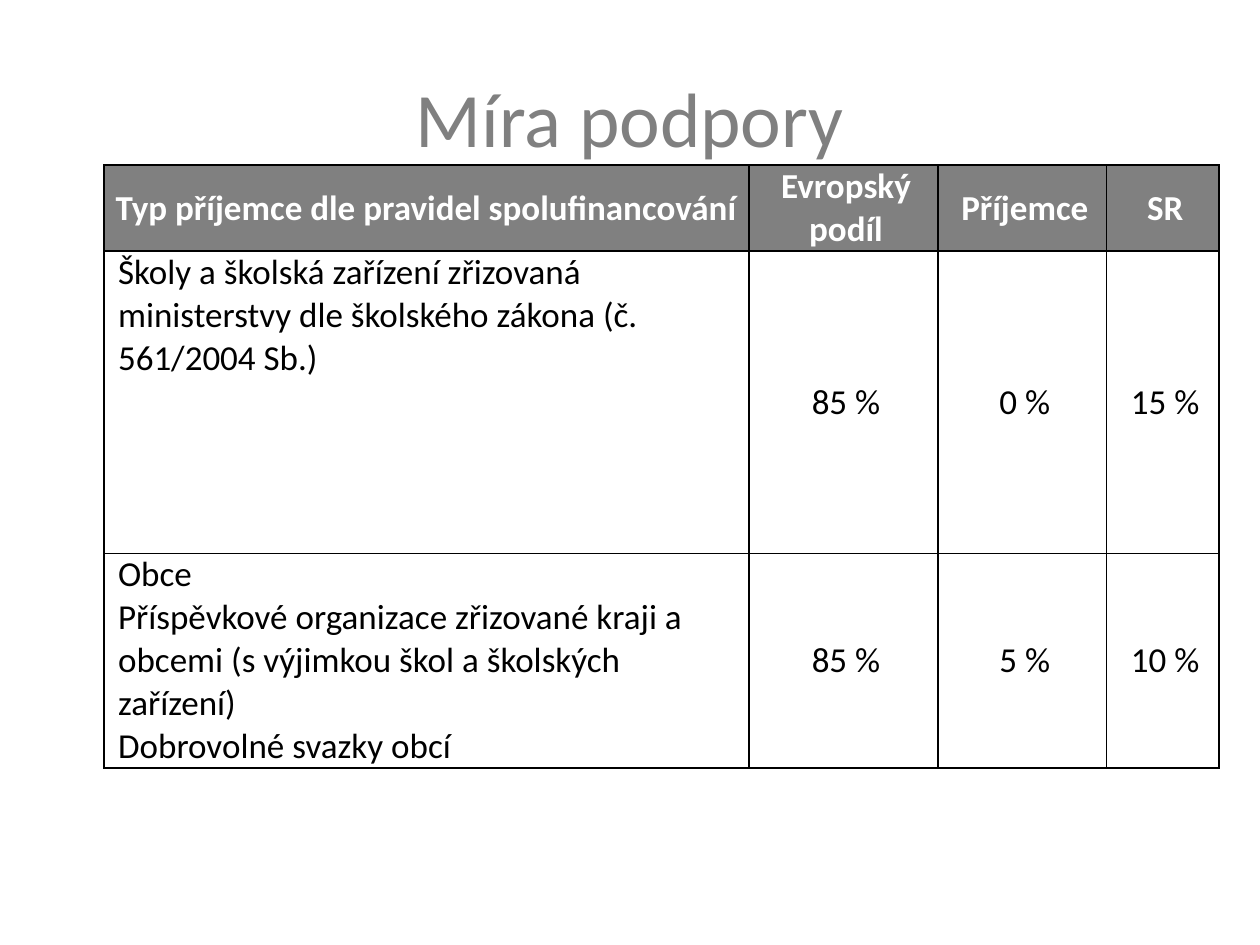
from dataclasses import dataclass

from lxml.etree import SubElement
from pptx import Presentation
from pptx.dml.color import RGBColor
from pptx.enum.text import MSO_ANCHOR as Anchor, PP_ALIGN as Align
from pptx.oxml.ns import qn
from pptx.slide import Slide
from pptx.table import _Cell as Cell
from pptx.text.text import _Paragraph as Paragraph
from pptx.util import Cm, Pt


@dataclass(frozen=True)
class Theme:
    font: str = "Calibri"
    title_size: int = 44
    table_size: int = 20
    gray: str = "808080"
    white: str = "FFFFFF"
    black: str = "000000"
    border_width: int = 1


@dataclass(frozen=True)
class SupportRow:
    recipients: str
    shares: tuple[str, str, str]
    height: float
    is_header: bool = False


THEME = Theme()
TITLE = "Míra podpory"
COLUMN_WIDTHS = (13.0, 3.81, 3.4, 2.26)
PARAGRAPH_INDENT = Cm(0.1)
ROWS = (
    SupportRow(
        "Typ příjemce dle pravidel spolufinancování",
        ("Evropský podíl", "Příjemce", "SR"),
        1.6,
        is_header=True,
    ),
    SupportRow(
        "Školy a školská zařízení zřizovaná ministerstvy dle školského zákona "
        "(č. 561/2004 Sb.)",
        ("85 %", "0 %", "15 %"),
        6.1,
    ),
    SupportRow(
        "Obce\n"
        "Příspěvkové organizace zřizované kraji a obcemi "
        "(s výjimkou škol a školských zařízení)\n"
        "Dobrovolné svazky obcí",
        ("85 %", "5 %", "10 %"),
        3.0,
    ),
)


def format_paragraph(
    paragraph: Paragraph, size: int, color: str, bold: bool, alignment: Align
) -> None:
    paragraph.alignment = alignment
    values = {"name": THEME.font, "size": Pt(size), "bold": bold}
    for name, value in values.items():
        setattr(paragraph.font, name, value)
    paragraph.font.color.rgb = RGBColor.from_string(color)


def add_borders(cell: Cell) -> None:
    properties = cell._tc.get_or_add_tcPr()
    for side in ("lnL", "lnR", "lnT", "lnB"):
        line = SubElement(
            properties, qn(f"a:{side}"), w=str(Pt(THEME.border_width))
        )
        fill = SubElement(line, qn("a:solidFill"))
        SubElement(fill, qn("a:srgbClr"), val=THEME.black)


def fill_cell(cell: Cell, text: str, is_header: bool, is_recipient: bool) -> None:
    is_body_text = is_recipient and not is_header
    side_margin = Cm(0.18 if is_body_text else 0.13)
    values = {
        "text": text,
        "vertical_anchor": Anchor.TOP if is_body_text else Anchor.MIDDLE,
        "margin_left": side_margin,
        "margin_right": side_margin,
        "margin_top": 0,
        "margin_bottom": 0,
    }
    for name, value in values.items():
        setattr(cell, name, value)

    add_borders(cell)
    if is_header:
        cell.fill.solid()
        cell.fill.fore_color.rgb = RGBColor.from_string(THEME.gray)
    else:
        cell.fill.background()

    color = THEME.white if is_header else THEME.black
    alignment = Align.LEFT if is_recipient else Align.CENTER
    for paragraph in cell.text_frame.paragraphs:
        format_paragraph(paragraph, THEME.table_size, color, is_header, alignment)
        paragraph._p.get_or_add_pPr().set("marL", str(PARAGRAPH_INDENT))


def add_title(slide: Slide) -> None:
    title = slide.shapes.title
    values = {
        "left": Cm(1.27), "top": Cm(0.76), "width": Cm(22.86), "height": Cm(3.18)
    }
    for name, value in values.items():
        setattr(title, name, value)
    title.text_frame.text = TITLE
    title.text_frame.vertical_anchor = Anchor.MIDDLE
    format_paragraph(
        title.text_frame.paragraphs[0],
        THEME.title_size, THEME.gray, False, Align.CENTER,
    )


def add_support_table(slide: Slide) -> None:
    table = slide.shapes.add_table(
        len(ROWS), len(COLUMN_WIDTHS), Cm(2.1), Cm(3.33),
        Cm(sum(COLUMN_WIDTHS)), Cm(sum(row.height for row in ROWS)),
    ).table
    table.horz_banding = False
    for column, width in zip(table.columns, COLUMN_WIDTHS):
        column.width = Cm(width)
    for table_row, row in zip(table.rows, ROWS):
        table_row.height = Cm(row.height)
        texts = (row.recipients, *row.shares)
        for index, (cell, text) in enumerate(zip(table_row.cells, texts)):
            fill_cell(cell, text, row.is_header, is_recipient=index == 0)


def main() -> None:
    presentation = Presentation()
    presentation.slide_width = Cm(25.4)
    presentation.slide_height = Cm(19.05)
    title_only = presentation.slide_layouts[5]
    slide = presentation.slides.add_slide(title_only)
    add_title(slide)
    add_support_table(slide)
    presentation.save("out.pptx")


if __name__ == "__main__":
    main()
